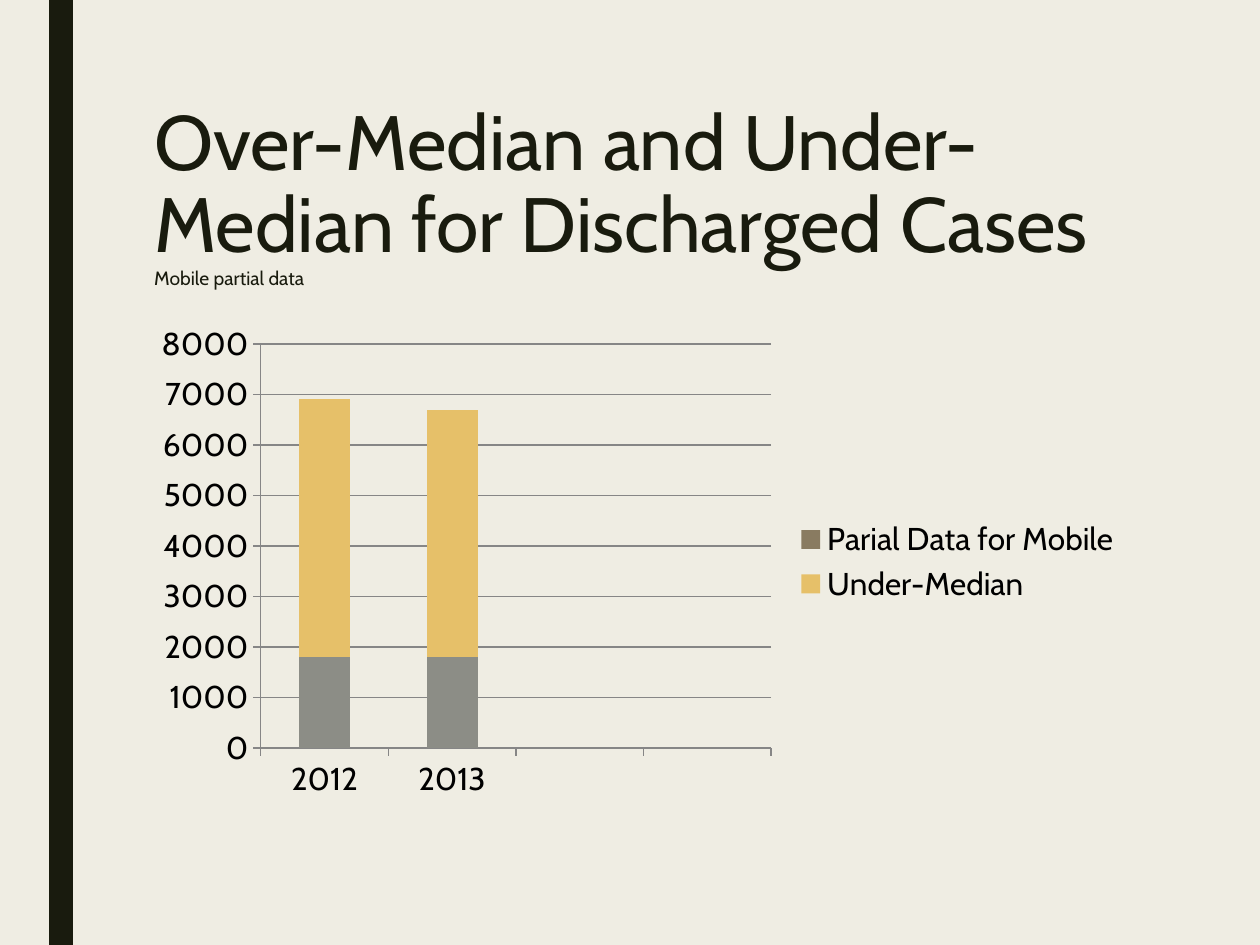
"""Build the slide on over-median and under-median discharged cases."""
import pptx
import pptx.chart.data
import pptx.dml.color
import pptx.enum.chart
import pptx.enum.shapes
import pptx.enum.text
import pptx.oxml
import pptx.oxml.ns
import pptx.util

Pt = pptx.util.Pt
FONT = "Cabin"
COLORS = {
    "paper": "EFEDE3",
    "ink": "191B0E",
    "label": "000000",
    "axis": "868686",
    "Series 1": "8C8D86",
    "Under-Median": "E6C069",
    "Parial Data for Mobile": "897B61",
}


def paint(color_holder, name):
    color_holder.rgb = pptx.dml.color.RGBColor.from_string(COLORS[name])


deck = pptx.Presentation()
deck.slide_width, deck.slide_height = Pt(720), Pt(540)
slide = deck.slides.add_slide(deck.slide_layouts[6])
slide.background.fill.solid()
paint(slide.background.fill.fore_color, "paper")

side_bar = slide.shapes.add_shape(
    pptx.enum.shapes.MSO_SHAPE.RECTANGLE, Pt(28.1), 0, Pt(13.6), Pt(540)
)
side_bar.shadow.inherit = False
side_bar.fill.solid()
paint(side_bar.fill.fore_color, "ink")
side_bar.line.fill.background()

heading = slide.shapes.add_textbox(Pt(81), Pt(54), Pt(567), Pt(117)).text_frame
heading.word_wrap = True
heading.vertical_anchor = pptx.enum.text.MSO_ANCHOR.MIDDLE
heading_lines = heading.paragraphs[0]
heading_lines.line_spacing = 0.89
for text, size in (
    ("Over-Median and Under-Median for Discharged Cases", 44),
    ("Mobile partial data", 11),
):
    if heading_lines.runs:
        heading_lines.add_line_break()
    run = heading_lines.add_run()
    run.text = text
    run.font.name, run.font.size = FONT, Pt(size)
    paint(run.font.color, "ink")

cases = pptx.chart.data.CategoryChartData()
cases.categories = ["2012", "2013", "", ""]
cases.add_series("Series 1", [1800, 1800, None, None])
cases.add_series("Under-Median", [5100, 4900, None, None])
cases.add_series("Parial Data for Mobile", [None] * 4)
chart = slide.shapes.add_chart(
    pptx.enum.chart.XL_CHART_TYPE.COLUMN_STACKED,
    Pt(81), Pt(180), Pt(567), Pt(282), cases,
).chart
chart.has_title = False
chart.font.name, chart.font.size = FONT, Pt(18)
paint(chart.font.color, "label")

columns = chart.plots[0]
columns.gap_width, columns.overlap = 150, 100
columns.vary_by_categories = False
for series in columns.series:
    series.format.fill.solid()
    paint(series.format.fill.fore_color, series.name)

years, counts = chart.category_axis, chart.value_axis
counts.minimum_scale, counts.maximum_scale, counts.major_unit = 0, 8000, 1000
counts.has_major_gridlines = True
for axis in (years, counts):
    axis.major_tick_mark = pptx.enum.chart.XL_TICK_MARK.OUTSIDE
    axis.minor_tick_mark = pptx.enum.chart.XL_TICK_MARK.NONE
for ruled in (years, counts, counts.major_gridlines):
    ruled.format.line.width = Pt(0.75)
    paint(ruled.format.line.color, "axis")

chart.has_legend = True
chart.legend.position = pptx.enum.chart.XL_LEGEND_POSITION.RIGHT
chart.legend.include_in_layout = False
hidden_entry = pptx.oxml.parse_xml(
    f"<c:legendEntry {pptx.oxml.ns.nsdecls('c')}>"
    '<c:idx val="0"/><c:delete val="1"/></c:legendEntry>'
)
legend_position = chart.legend._element.find(pptx.oxml.ns.qn("c:legendPos"))
legend_position.addnext(hidden_entry)

deck.save("out.pptx")
